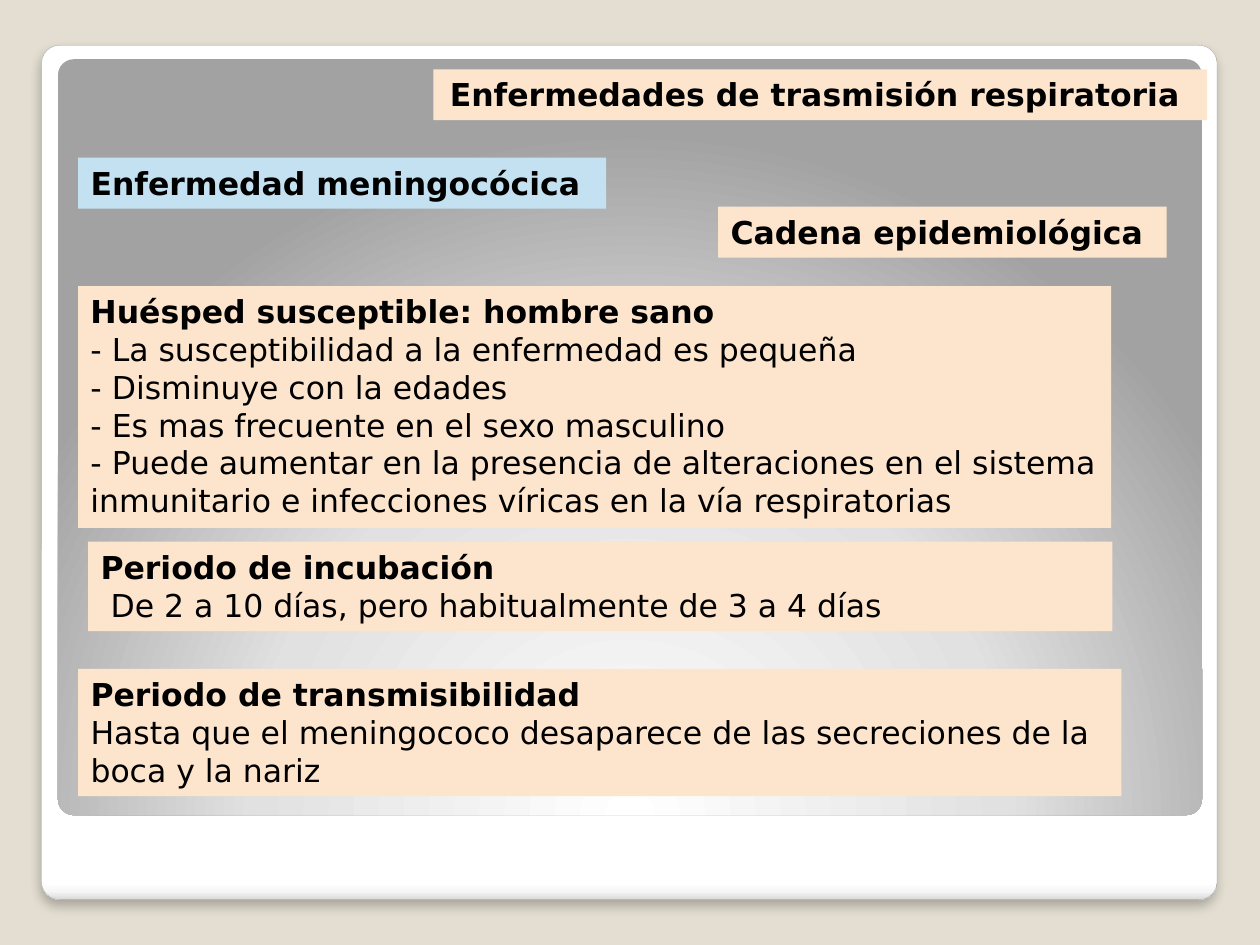
from lxml import etree
from pptx import Presentation
from pptx.dml.color import RGBColor
from pptx.enum.shapes import MSO_SHAPE
from pptx.enum.text import MSO_AUTO_SIZE, PP_ALIGN
from pptx.oxml.ns import qn
from pptx.util import Inches, Pt

ROUNDED = MSO_SHAPE.ROUNDED_RECTANGLE
GROW = MSO_AUTO_SIZE.SHAPE_TO_FIT_TEXT
LEFT, CENTER = PP_ALIGN.LEFT, PP_ALIGN.CENTER
SLIDE_W, SLIDE_H = Inches(10), Inches(7.5)
FONT = "DejaVu Sans"
COLORS = {
    "background": "E3DED1",
    "white": "FFFFFF",
    "near_white": "F7F7F7",
    "edge": "DADADA",
    "pale_gray": "E1E1E1",
    "gray": "A2A2A2",
    "outline": "A4A4A4",
    "blue": "C4E1F2",
    "peach": "FDE5CD",
    "black": "000000",
}


def rgb(name):
    return RGBColor.from_string(COLORS[name])


def place(left, top, width, height):
    return [round(share * size / 100) for share, size in
            zip((left, top, width, height), (SLIDE_W, SLIDE_H) * 2)]


def add_node(parent, tag, **attrs):
    return etree.SubElement(parent, qn(tag), {k: str(v) for k, v in attrs.items()})


def add_panel(s, box, stops):
    sp = s.shapes.add_shape(ROUNDED, *place(*box))
    sp.adjustments[0] = 0.021
    sp.shadow.inherit = False
    sp.line.fill.background()
    sp.fill.background()
    props = sp.fill._xPr
    grad = etree.Element(qn("a:gradFill"), rotWithShape="1")
    stop_list = add_node(grad, "a:gsLst")
    for position, name in stops:
        stop = add_node(stop_list, "a:gs", pos=position * 1000)
        add_node(stop, "a:srgbClr", val=COLORS[name])
    props.replace(props.find(qn("a:noFill")), grad)
    return sp, grad


def add_frame(s):
    stops = [(0, "white"), (98, "white"), (99, "near_white"), (100, "edge")]
    sp, grad = add_panel(s, (3.3, 4.8, 93.3, 90.4), stops)
    add_node(grad, "a:lin", ang=90 * 60000, scaled=0)
    sp.line.color.rgb = rgb("outline")
    sp.line.width = Pt(0.16)
    effects = sp._element.spPr.find(qn("a:effectLst"))
    shadow = add_node(effects, "a:outerShdw", blurRad=Pt(6), dist=Pt(4),
                      dir=90 * 60000, algn="t", rotWithShape=0)
    color = add_node(shadow, "a:srgbClr", val=COLORS["black"])
    add_node(color, "a:alpha", val=25000)


def add_backdrop(s):
    stops = [(0, "white"), (55, "pale_gray"), (100, "gray")]
    _, grad = add_panel(s, (4.6, 6.27, 90.8, 80), stops)
    circle = add_node(grad, "a:path", path="circle")
    add_node(circle, "a:fillToRect", l=50000, t=175000, r=50000, b=-75000)


def add_text(s, box, heading, *lines, fill="peach", align=LEFT, wrap=True):
    sp = s.shapes.add_textbox(*place(*box))
    sp.fill.solid()
    sp.fill.fore_color.rgb = rgb(fill)
    tf = sp.text_frame
    tf.word_wrap = wrap
    tf.auto_size = GROW
    for i, text in enumerate((heading, *lines)):
        p = tf.add_paragraph() if i else tf.paragraphs[0]
        p.alignment = align
        r = p.add_run()
        r.text = text
        r.font.name = FONT
        r.font.size = Pt(18)
        r.font.bold = i == 0
        r.font.color.rgb = rgb("black")


def main():
    prs = Presentation()
    prs.slide_width, prs.slide_height = SLIDE_W, SLIDE_H
    s = prs.slides.add_slide(prs.slide_layouts[6])
    s.background.fill.solid()
    s.background.fill.fore_color.rgb = rgb("background")
    add_frame(s)
    add_backdrop(s)
    add_text(s, (6.2, 16.67, 41.9, 5.4), "Enfermedad meningocócica",
             fill="blue", wrap=False)
    add_text(s, (34.4, 7.33, 61.4, 5.4),
             "Enfermedades de trasmisión respiratoria ", align=CENTER)
    add_text(s, (57, 21.87, 35.6, 5.4), "Cadena epidemiológica", wrap=False)
    add_text(s, (6.2, 30.27, 82, 25.6),
             "Huésped susceptible: hombre sano",
             "- La susceptibilidad a la enfermedad es pequeña",
             "- Disminuye con la edades",
             "- Es mas frecuente en el sexo masculino",
             "- Puede aumentar en la presencia de alteraciones en el sistema "
             "inmunitario e infecciones víricas en la vía respiratorias")
    add_text(s, (7, 57.33, 81.3, 9.47), "Periodo de incubación",
             " De 2 a 10 días, pero habitualmente de 3 a 4 días")
    add_text(s, (6.2, 70.8, 82.8, 13.47), "Periodo de transmisibilidad",
             "Hasta que el meningococo desaparece de las secreciones de la "
             "boca y la nariz")
    prs.save("out.pptx")


if __name__ == "__main__":
    main()
